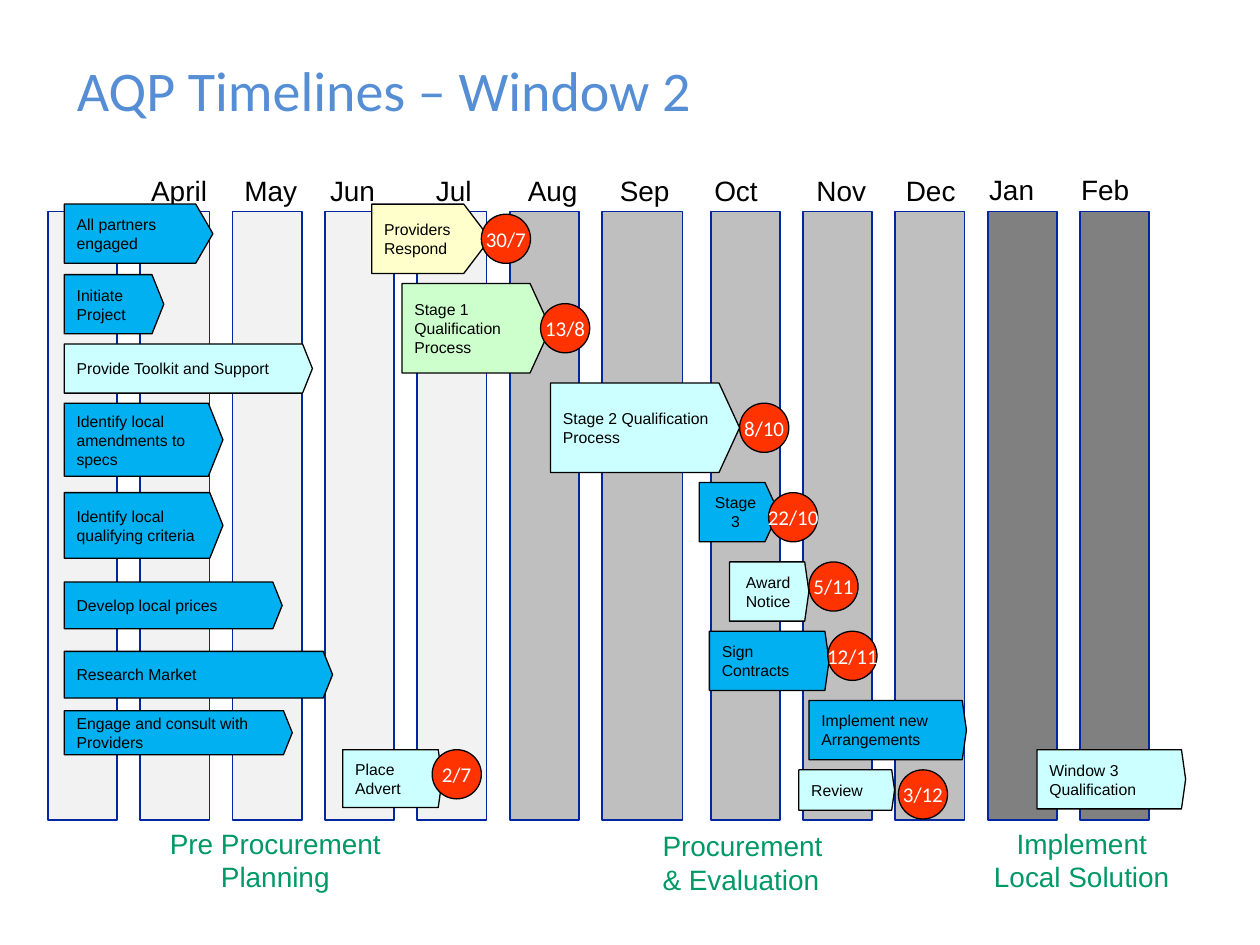
from dataclasses import dataclass

import pptx
import pptx.dml.color
import pptx.enum.shapes
import pptx.enum.text
import pptx.util

Inches = pptx.util.Inches
Pt = pptx.util.Pt
Align = pptx.enum.text.PP_ALIGN
Anchor = pptx.enum.text.MSO_ANCHOR
Preset = pptx.enum.shapes.MSO_SHAPE


@dataclass(frozen=True)
class Theme:
    heading_font: str = "Calibri"
    body_font: str = "Arial"
    title_size: float = 32
    label_size: float = 16
    milestone_size: float = 12
    activity_size: float = 9
    title: str = "558ED5"
    text: str = "000000"
    phase: str = "009966"
    white: str = "FFFFFF"
    column_line: str = "00279F"
    planning: str = "F2F2F2"
    procurement: str = "BFBFBF"
    implementation: str = "808080"
    blue: str = "00B0F0"
    aqua: str = "CCFFFF"
    yellow: str = "FFFFCC"
    green: str = "CCFFCC"
    milestone: str = "FF3300"


THEME = Theme()


@dataclass(frozen=True)
class Label:
    text: str
    left: float
    top: float
    width: float
    align: Align = Align.LEFT


@dataclass(frozen=True)
class Activity:
    text: str
    left: float
    top: float
    width: float
    height: float
    color: str
    point: float  # arrow tip length as a share of the height
    align: Align = Align.LEFT


@dataclass(frozen=True)
class Milestone:
    date: str
    left: float
    top: float


COLUMN_TOP, COLUMN_HEIGHT, COLUMN_PITCH = 1.68, 4.83, 0.733
COLUMN_WIDTH, SEPTEMBER_WIDTH = 0.55, 0.64
MARCH_LEFT, OCTOBER_LEFT = 0.38, 5.64
SEPTEMBER, OCTOBER = 6, 7
COLUMN_COLORS = [THEME.planning] * 5 + [THEME.procurement] * 5 + [THEME.implementation] * 2
MILESTONE_SIZE = 0.39

MONTHS = [
    Label(name, left, top, 0.94)
    for name, left, top in (
        ("April", 1.14, 1.32), ("May", 1.88, 1.32), ("Jun", 2.56, 1.32),
        ("Jul", 3.4, 1.32), ("Aug", 4.13, 1.32), ("Sep", 4.86, 1.32),
        ("Oct", 5.61, 1.32), ("Nov", 6.42, 1.32), ("Dec", 7.13, 1.32),
        ("Jan", 7.79, 1.31), ("Feb", 8.52, 1.31),
    )
]

PHASES = [
    Label("Pre Procurement\nPlanning", 1.18, 6.51, 2.01, Align.CENTER),
    Label("Procurement\n& Evaluation", 5.16, 6.53, 1.65),
    Label("Implement\nLocal Solution", 7.71, 6.51, 1.75, Align.CENTER),
]

ACTIVITIES = [
    Activity("Place Advert", 2.72, 5.95, 0.79, 0.46, THEME.aqua, 0.07),
    Activity("All partners engaged", 0.51, 1.62, 1.18, 0.47, THEME.blue, 0.29),
    Activity("Provide Toolkit and Support", 0.51, 2.73, 1.97, 0.39, THEME.aqua, 0.2),
    Activity("Initiate Project", 0.51, 2.18, 0.79, 0.47, THEME.blue, 0.2),
    Activity("Identify local amendments to specs", 0.51, 3.2, 1.26, 0.58, THEME.blue, 0.2),
    Activity("Identify local qualifying criteria", 0.51, 3.91, 1.26, 0.52, THEME.blue, 0.2),
    Activity("Develop local prices", 0.51, 4.62, 1.73, 0.37, THEME.blue, 0.2),
    Activity("Research Market", 0.51, 5.17, 2.13, 0.37, THEME.blue, 0.2),
    Activity("Engage and consult with Providers", 0.51, 5.64, 1.81, 0.35, THEME.blue, 0.2),
    Activity("Providers Respond", 2.95, 1.62, 0.94, 0.55, THEME.yellow, 0.38),
    Activity("Stage 1 Qualification Process", 3.19, 2.25, 1.18, 0.71, THEME.green, 0.23),
    Activity("Stage 2 Qualification Process", 4.37, 3.04, 1.5, 0.71, THEME.aqua, 0.23),
    Activity("Stage\n3", 5.55, 3.83, 0.63, 0.47, THEME.blue, 0.23, Align.CENTER),
    Activity("Award Notice", 5.79, 4.46, 0.63, 0.47, THEME.aqua, 0.07, Align.CENTER),
    Activity("Sign Contracts", 5.63, 5.01, 0.95, 0.47, THEME.blue, 0.07),
    Activity("Review", 6.34, 6.11, 0.76, 0.32, THEME.aqua, 0.07),
    Activity("Implement new Arrangements", 6.42, 5.56, 1.25, 0.47, THEME.blue, 0.07),
    Activity("Window 3 Qualification", 8.23, 5.95, 1.18, 0.47, THEME.aqua, 0.07),
]

MILESTONES = [
    Milestone("2/7", 3.43, 5.95),
    Milestone("30/7", 3.82, 1.7),
    Milestone("13/8", 4.29, 2.41),
    Milestone("8/10", 5.87, 3.2),
    Milestone("22/10", 6.1, 3.91),
    Milestone("5/11", 6.42, 4.46),
    Milestone("12/11", 6.57, 5.01),
    Milestone("3/12", 7.13, 6.11),
]


def rgb(color: str) -> pptx.dml.color.RGBColor:
    return pptx.dml.color.RGBColor.from_string(color)


def write(frame, text: str, font: str, size: float, color: str, align: Align) -> None:
    """Fill a text frame, one paragraph per line of text."""
    frame.text = text
    for paragraph in frame.paragraphs:
        paragraph.alignment = align
        paragraph.font.name = font
        paragraph.font.size = Pt(size)
        paragraph.font.color.rgb = rgb(color)


def add_outlined(slide, preset, left: float, top: float, width: float, height: float,
                 fill: str, line: str, line_width: float):
    shape = slide.shapes.add_shape(
        preset, Inches(left), Inches(top), Inches(width), Inches(height))
    shape.shadow.inherit = False
    shape.fill.solid()
    shape.fill.fore_color.rgb = rgb(fill)
    shape.line.color.rgb = rgb(line)
    shape.line.width = Pt(line_width)
    return shape


def add_title(slide, text: str) -> None:
    title = slide.shapes.title
    title.left, title.top = Inches(0.51), Inches(0.21)
    title.width, title.height = Inches(5.75), Inches(0.99)
    title.text_frame.vertical_anchor = Anchor.MIDDLE
    write(title.text_frame, text, THEME.heading_font, THEME.title_size, THEME.title, Align.LEFT)


def add_month_columns(slide) -> None:
    for index, color in enumerate(COLUMN_COLORS):
        if index < OCTOBER:
            left = MARCH_LEFT + index * COLUMN_PITCH
        else:
            left = OCTOBER_LEFT + (index - OCTOBER) * COLUMN_PITCH
        width = SEPTEMBER_WIDTH if index == SEPTEMBER else COLUMN_WIDTH
        add_outlined(slide, Preset.RECTANGLE, left, COLUMN_TOP, width, COLUMN_HEIGHT,
                     color, THEME.column_line, 1)


def add_label(slide, label: Label, height: float, color: str):
    box = slide.shapes.add_textbox(
        Inches(label.left), Inches(label.top), Inches(label.width), Inches(height))
    write(box.text_frame, label.text, THEME.body_font, THEME.label_size, color, label.align)
    return box.text_frame


def add_month(slide, month: Label) -> None:
    frame = add_label(slide, month, 0.39, THEME.text)
    frame.word_wrap = True
    frame.margin_left = frame.margin_right = Inches(0.06)
    frame.margin_top = frame.margin_bottom = Inches(0.06)


def add_activity(slide, activity: Activity) -> None:
    arrow = add_outlined(slide, Preset.PENTAGON, activity.left, activity.top, activity.width,
                         activity.height, activity.color, THEME.text, 0.75)
    arrow.adjustments[0] = activity.point
    arrow.text_frame.vertical_anchor = Anchor.MIDDLE
    write(arrow.text_frame, activity.text, THEME.body_font, THEME.activity_size,
          THEME.text, activity.align)


def add_milestone(slide, milestone: Milestone) -> None:
    circle = add_outlined(slide, Preset.OVAL, milestone.left, milestone.top, MILESTONE_SIZE,
                          MILESTONE_SIZE, THEME.milestone, THEME.text, 0.75)
    circle.text_frame.word_wrap = False
    circle.text_frame.vertical_anchor = Anchor.MIDDLE
    write(circle.text_frame, milestone.date, THEME.heading_font, THEME.milestone_size,
          THEME.white, Align.CENTER)


def main() -> None:
    deck = pptx.Presentation()
    deck.slide_width, deck.slide_height = Inches(10), Inches(7.5)
    slide = deck.slides.add_slide(deck.slide_layouts.get_by_name("Title Only"))
    add_title(slide, "AQP Timelines – Window 2")
    add_month_columns(slide)
    for month in MONTHS:
        add_month(slide, month)
    for phase in PHASES:
        add_label(slide, phase, 0.64, THEME.phase).word_wrap = False
    for activity in ACTIVITIES:
        add_activity(slide, activity)
    for milestone in MILESTONES:
        add_milestone(slide, milestone)
    deck.save("out.pptx")


if __name__ == "__main__":
    main()
